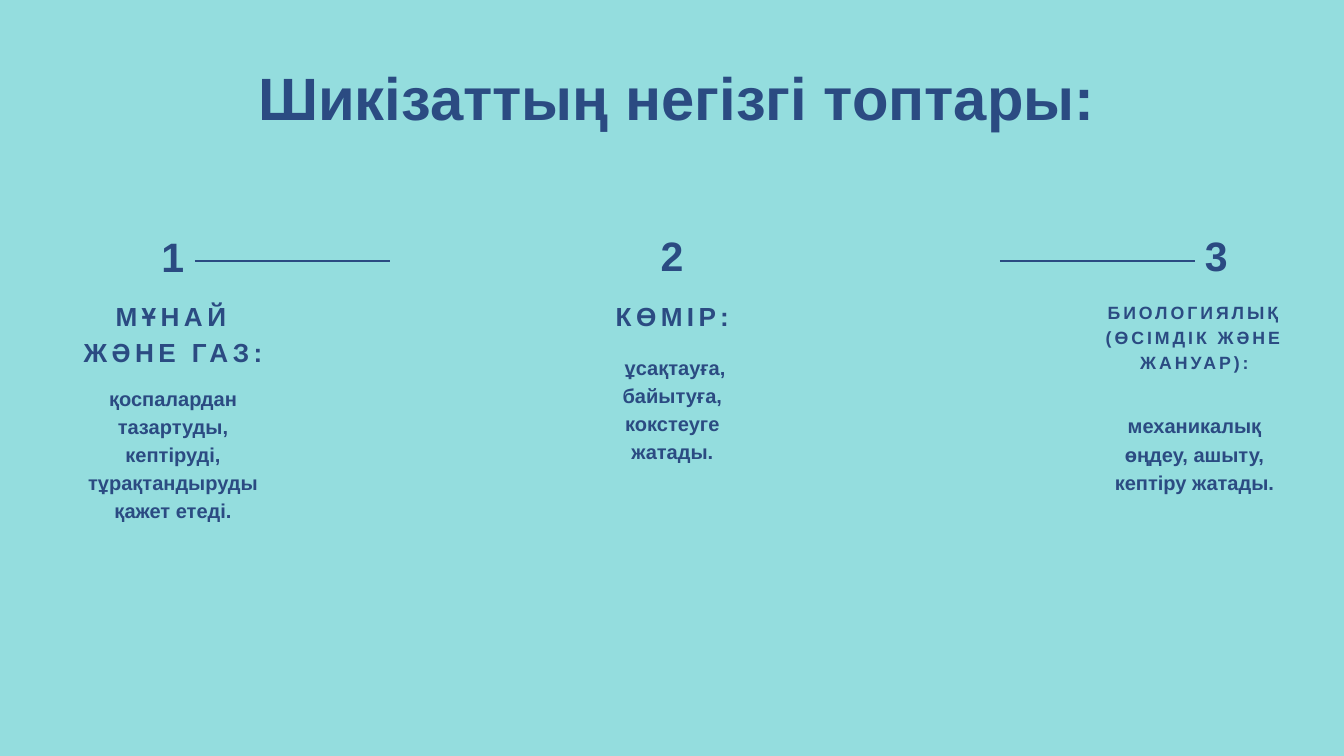
from pptx import Presentation
from pptx.dml.color import RGBColor
from pptx.enum.shapes import MSO_CONNECTOR
from pptx.enum.text import MSO_ANCHOR, MSO_AUTO_SIZE, PP_ALIGN
from pptx.oxml.ns import qn
from pptx.util import Pt
from lxml import etree

LINE = MSO_CONNECTOR.STRAIGHT
TOP = MSO_ANCHOR.TOP
GROW = MSO_AUTO_SIZE.SHAPE_TO_FIT_TEXT
MID = PP_ALIGN.CENTER

AQUA = RGBColor(0x94, 0xDD, 0xDE)
NAVY = RGBColor(0x2B, 0x4B, 0x82)

SCALE = 9144
FRAME = {"margin_left": 0, "margin_top": 0, "margin_right": 0,
         "margin_bottom": 0, "word_wrap": True, "auto_size": GROW,
         "vertical_anchor": TOP}
FONT = {"name": "Arial", "bold": True}
TRACK = 0.17

COLUMNS = [
    {"box": (123, 332, 269), "mark": ("1", 101),
     "head": ("МҰНАЙ ЖӘНЕ ГАЗ:", 107, 115, 28),
     "body": ("қоспалардан тазартуды, кептіруді, тұрақтандыруды қажет етеді.",
              237, 214)},
    {"box": (869, 330, 263), "mark": ("2", 98),
     "head": ("КӨМІР:", 109, 61, 28),
     "body": (" ұсақтауға, байытуға, кокстеуге жатады.", 193, 214)},
    {"box": (1643, 330, 269), "mark": ("3", 134),
     "head": ("БИОЛОГИЯЛЫҚ (ӨСІМДІК ЖӘНЕ ЖАНУАР):", 114, 151, 19),
     "body": ("механикалық өңдеу, ашыту, кептіру жатады.", 280, 130)},
]


def px(*nums):
    """Turn px lengths into EMU."""
    return [n * SCALE for n in nums]


def write(shape, text, size, lead=1.4, track=0):
    """Fill a shape with one centred paragraph."""
    frame = shape.text_frame
    for key, val in FRAME.items():
        setattr(frame, key, val)
    para = frame.paragraphs[0]
    para.alignment = MID
    para.line_spacing = Pt(round(size * lead, 1))
    run = para.add_run()
    run.text = text
    for key, val in {**FONT, "size": Pt(size)}.items():
        setattr(run.font, key, val)
    run.font.color.rgb = NAVY
    if track:
        run.font._element.set("spc", str(round(size * track, 1) * 100)[:3])


def title(slide, box, text):
    """Place the slide title in its box."""
    shape = slide.shapes.title
    shape.left, shape.top, shape.width, shape.height = px(*box)
    write(shape, text, 64, lead=1.2)


def column(slide, box, mark, head, body):
    """Place a number, a heading and a note inside a column."""
    left, top, wide = box
    add = slide.shapes.add_textbox
    text, dx = mark
    write(add(*px(left + dx, top, 66, 97)), text, 44, track=TRACK)
    text, dy, high, size = head
    write(add(*px(left, top + dy, wide, high)), text, size, track=TRACK)
    text, dy, high = body
    write(add(*px(left, top + dy, wide, high)), text, 21.5)


def rule(slide, box):
    """Draw a level line from a start point and a length."""
    left, top, wide = box
    line = slide.shapes.add_connector(LINE, *px(left, top, left + wide, top))
    line.line.color.rgb = NAVY
    line.line.width = Pt(2.25)
    etree.SubElement(line._element.spPr, qn("a:effectLst"))


def main():
    """Build and save the slide."""
    deck = Presentation()
    deck.slide_width, deck.slide_height = px(2000, 1125)
    slide = deck.slides.add_slide(deck.slide_layouts[5])
    fill = slide.background.fill
    fill.solid()
    fill.fore_color.rgb = AQUA
    title(slide, (112, 91, 1765, 128), " Шикізаттың негізгі топтары:")
    for col in COLUMNS:
        column(slide, **col)
    for left in (290, 1488):
        rule(slide, (left, 389, 290))
    deck.save("out.pptx")


if __name__ == "__main__":
    main()
